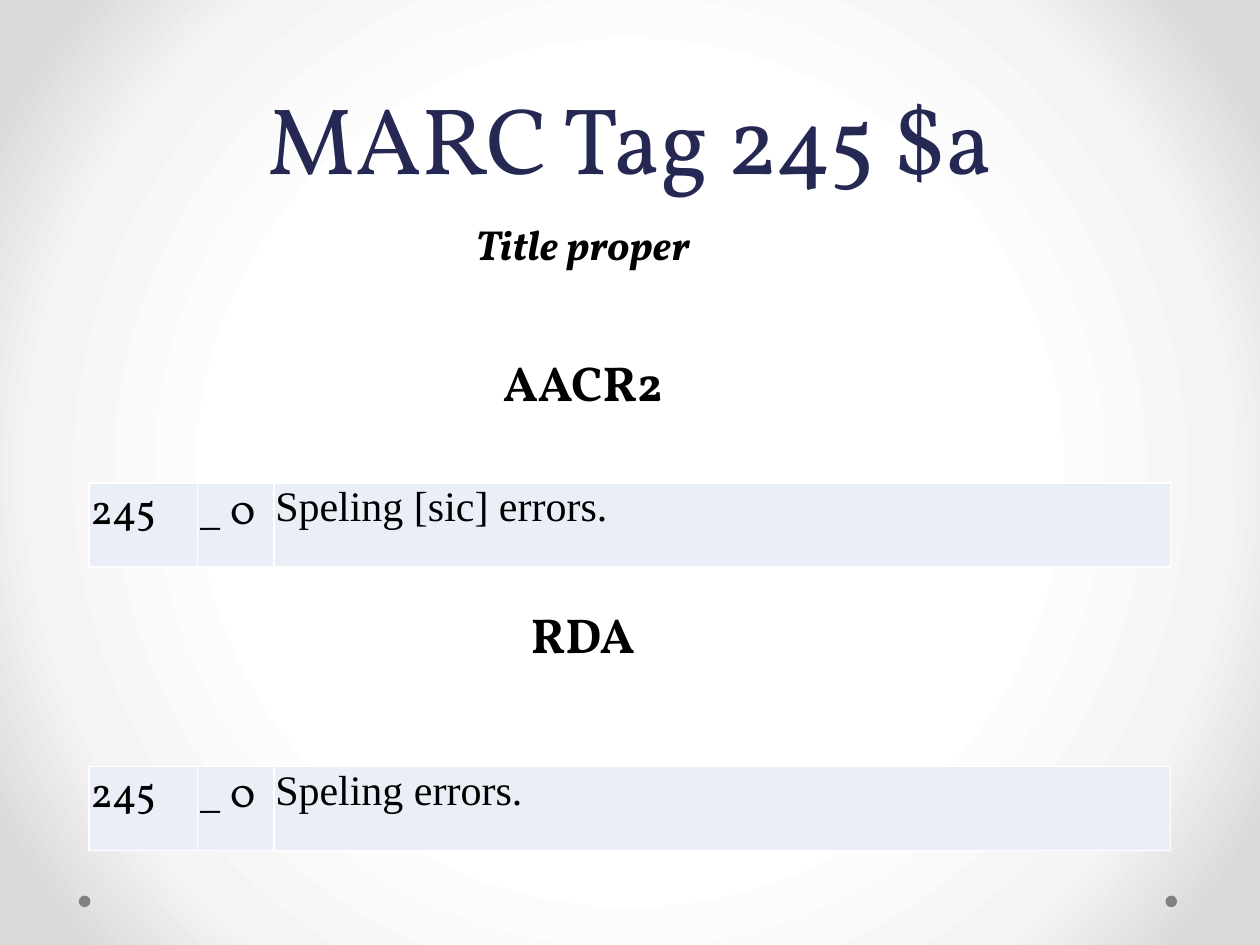
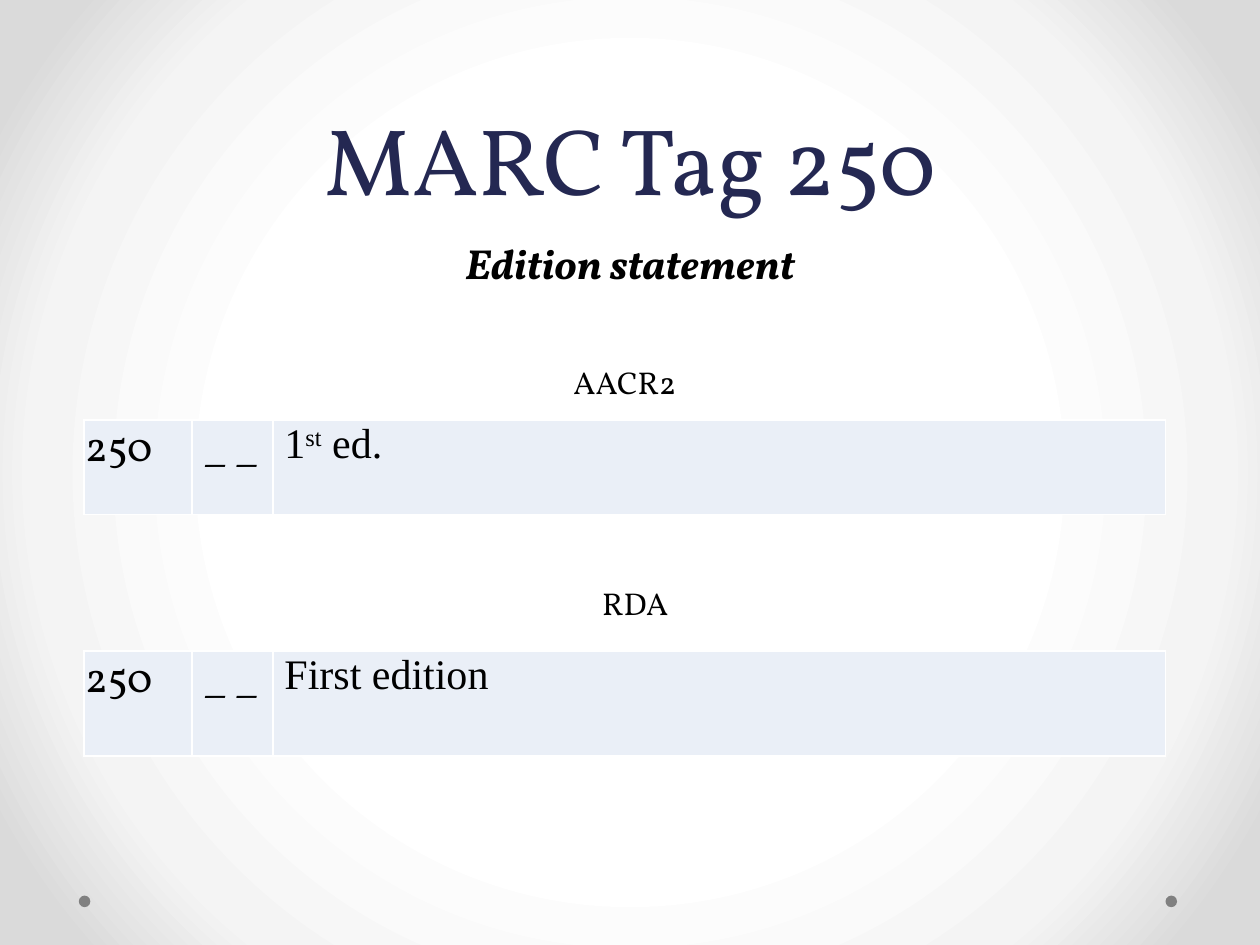
from lxml.etree import SubElement
from pptx import Presentation
from pptx.dml.color import RGBColor
from pptx.enum.shapes import MSO_SHAPE as Shape
from pptx.enum.text import MSO_ANCHOR as Anchor, MSO_AUTO_SIZE as AutoSize, PP_ALIGN as Align
from pptx.oxml.ns import qn
from pptx.util import Inches, Pt

COLORS = {"title": "242852", "text": "000000", "cell": "EAEFF7", "border": "FFFFFF",
          "dot": "808080", "center": "FFFFFF", "ring": "F4F4F4", "edge": "DADADA"}
SERIF, PLAIN = "Vollkorn", "Times New Roman"
COLUMNS, ROWS = 120, 90  # grid of twelfths of an inch
UNIT = Inches(10) / COLUMNS


def grid(*steps):
    return [round(step * UNIT) for step in steps]


def style(para, size, color="text", face=SERIF, bold=False, italic=False):
    font = para.font
    font.size, font.name, font.bold, font.italic = Pt(size), face, bold, italic
    font.color.rgb = RGBColor.from_string(COLORS[color])


# Each box is left, top, width, height in grid steps.
# A field's runs are pairs of text and superscript flag.
pages = [
    {"title": ("MARC Tag 245 $a", (6, 5, 108, 14)),
     "subtitle": ("Title proper", (16, 20.25, 79, 6)),
     "heading": (28, True),
     "headings": [("AACR2", (39.5, 33, 32, 6.8)), ("RDA", (48, 57, 15, 6.8))],
     "tag": "245", "indicators": "_ 0", "indent": 0.12, "widths": (10.3, 7.3, 85.4),
     "fields": [([("Speling [sic] errors.", False)], (8.5, 46, 103, 8)),
                ([("Speling errors.", False)], (8.5, 73, 103, 8))]},
    {"title": ("MARC Tag 250", (6, 0, 108, 21)),
     "subtitle": ("Edition statement", (26, 22, 68, 6)),
     "heading": (18, False),
     "headings": [("AACR2", (45, 34, 29, 4.8)), ("RDA", (50, 55, 21, 4.8))],
     "tag": "250", "indicators": "_ _", "indent": 1.1, "widths": (10.3, 7.7, 85),
     "fields": [([("1", False), ("st", True), (" ed.", False)], (8, 40, 103, 9)),
                ([("First edition", False)], (8, 62, 103, 10))]},
]

deck = Presentation()
deck.slide_width, deck.slide_height = grid(COLUMNS, ROWS)

# Radial background, shared through the master
deck.slide_master.background.fill.gradient()
gradient = deck.slide_master.element.find(".//" + qn("a:gradFill"))
for child in list(gradient):
    gradient.remove(child)
stops = SubElement(gradient, qn("a:gsLst"))
for position, name in ((50, "center"), (76, "ring"), (92, "edge")):
    stop = SubElement(stops, qn("a:gs"), pos=str(position * 1000))
    SubElement(stop, qn("a:srgbClr"), val=COLORS[name])
circle = SubElement(gradient, qn("a:path"), path="circle")
SubElement(circle, qn("a:fillToRect"), {side: "50000" for side in "ltrb"})

for content in pages:
    page = deck.slides.add_slide(deck.slide_layouts[6])

    for left in (111, 7.5):
        dot = page.shapes.add_shape(Shape.OVAL, *grid(left, 85.3, 1.1, 1.1))
        dot.shadow.inherit = False
        dot.fill.solid()
        dot.fill.fore_color.rgb = RGBColor.from_string(COLORS["dot"])
        dot.line.fill.background()

    # Title, subtitle and headings
    size, bold = content["heading"]
    labels = [(content["title"], {"size": 54, "color": "title"}),
              (content["subtitle"], {"size": 24, "bold": True, "italic": True})]
    labels += [(heading, {"size": size, "bold": bold}) for heading in content["headings"]]
    for (text, place), look in labels:
        frame = page.shapes.add_textbox(*grid(*place)).text_frame
        frame.word_wrap = True
        para = frame.paragraphs[0]
        para.text, para.alignment = text, Align.CENTER
        style(para, **look)
        if look.get("color") == "title":
            frame.vertical_anchor = Anchor.BOTTOM
            para.line_spacing = Pt(58)
        else:
            frame.auto_size = AutoSize.SHAPE_TO_FIT_TEXT

    # One single-row table for each cataloguing code
    for runs, place in content["fields"]:
        table = page.shapes.add_table(1, 3, *grid(*place)).table
        table.first_row = table.horz_banding = False
        for column, width in zip(table.columns, grid(*content["widths"])):
            column.width = width
        entries = [([(content["tag"], False)], SERIF, 0.12),
                   ([(content["indicators"], False)], SERIF, content["indent"]),
                   (runs, PLAIN, content["indent"])]
        for cell, (spans, face, indent) in zip(table.rows[0].cells, entries):
            cell.margin_left, cell.margin_right, cell.margin_top, cell.margin_bottom = grid(
                indent, 0.12, 0.12, 0.12)
            para = cell.text_frame.paragraphs[0]
            style(para, 24, face=face)
            for text, raised in spans:
                span = para.add_run()
                span.text = text
                if raised:
                    span._r.get_or_add_rPr().set("baseline", "30000")
            properties = cell._tc.get_or_add_tcPr()
            for side in ("a:lnL", "a:lnR", "a:lnT", "a:lnB"):
                border = SubElement(properties, qn(side), w=str(Pt(1)))
                paint = SubElement(border, qn("a:solidFill"))
                SubElement(paint, qn("a:srgbClr"), val=COLORS["border"])
            cell.fill.solid()
            cell.fill.fore_color.rgb = RGBColor.from_string(COLORS["cell"])

deck.save("out.pptx")
